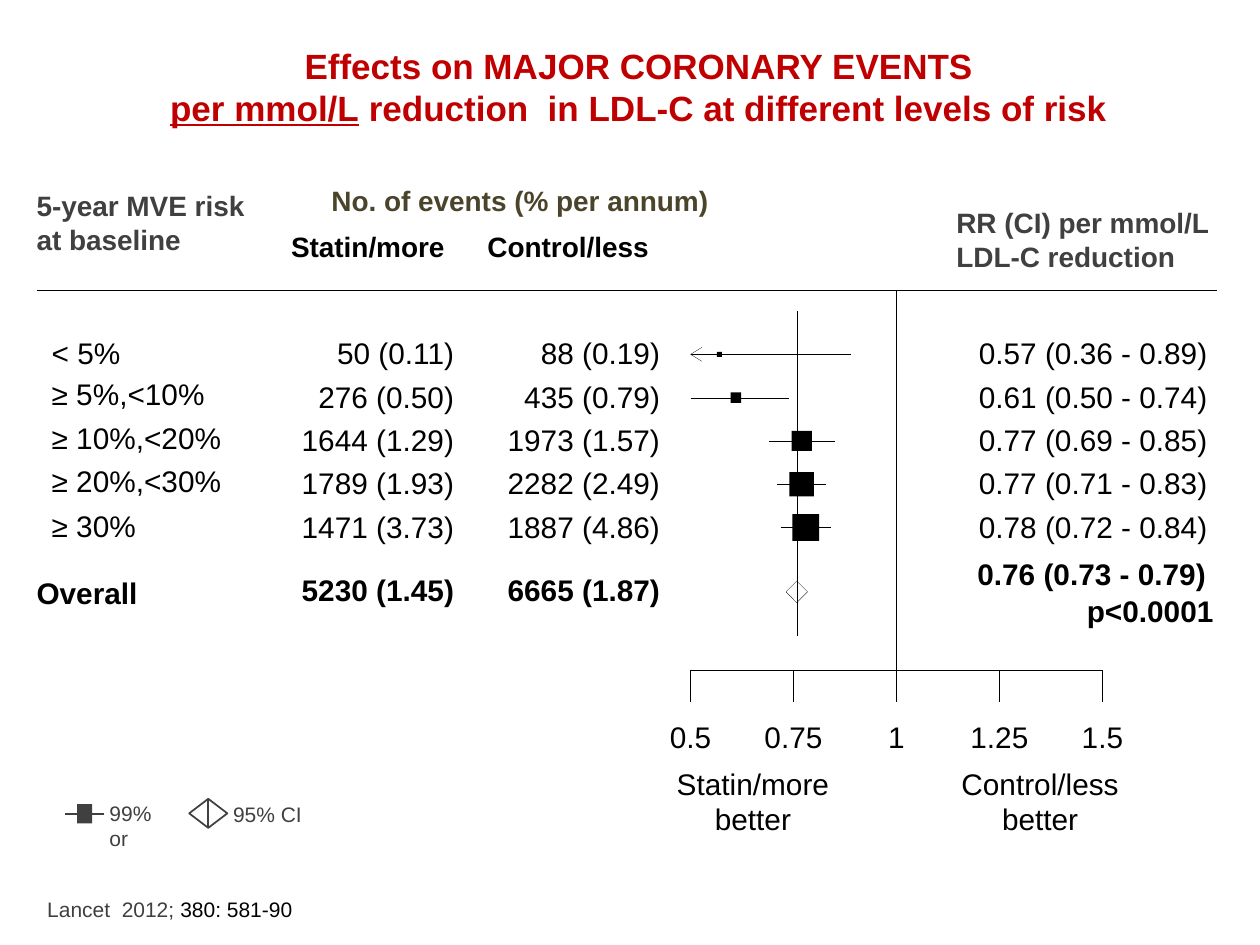
from lxml import etree
from pptx import Presentation
from pptx.dml.color import RGBColor
from pptx.enum.dml import MSO_LINE
from pptx.enum.shapes import MSO_CONNECTOR, MSO_SHAPE
from pptx.enum.text import MSO_ANCHOR, PP_ALIGN
from pptx.oxml.ns import qn
from pptx.util import Pt

LEFT, CENTER, RIGHT = PP_ALIGN.LEFT, PP_ALIGN.CENTER, PP_ALIGN.RIGHT
STRAIGHT = MSO_CONNECTOR.STRAIGHT
RECTANGLE, DIAMOND = MSO_SHAPE.RECTANGLE, MSO_SHAPE.DIAMOND
FONT, BLACK, GREY, RED, OLIVE = "Arial", "000000", "404040", "C00000", "4A452A"
HAIRLINE = 0.13

TITLE = [("Effects on MAJOR CORONARY EVENTS\v", False), ("per mmol/L", True),
         (" reduction  in LDL-C at different levels of risk", False)]
HEADERS = [
    ("5-year MVE risk\nat baseline", 20.9, 108, 130, GREY),
    ("No. of events (% per annum)", 189.4, 105.1, 225, OLIVE),
    ("Statin/more", 166.3, 131, 95, BLACK),
    ("Control/less", 278.6, 131, 100, BLACK),
    ("RR (CI) per mmol/L\nLDL-C reduction", 546.5, 117.4, 151, GREY),
]
ROWS = [
    ("< 5%", 191.5, "50 (0.11)", "88 (0.19)", 0.57, 0.36, 0.89, 2.9),
    ("≥ 5%,<10%", 214.8, "276 (0.50)", "435 (0.79)", 0.61, 0.50, 0.74, 6),
    ("≥ 10%,<20%", 239.8, "1644 (1.29)", "1973 (1.57)", 0.77, 0.69, 0.85, 11.5),
    ("≥ 20%,<30%", 264.2, "1789 (1.93)", "2282 (2.49)", 0.77, 0.71, 0.83, 14),
    ("≥ 30%", 290.2, "1471 (3.73)", "1887 (4.86)", 0.78, 0.72, 0.84, 15.3),
]
OVERALL = [
    ("Overall", 20.9, 328.5, 80, LEFT),
    ("5230 (1.45)", 149.5, 326.9, 110, RIGHT),
    ("6665 (1.87)", 267.2, 326.9, 110, RIGHT),
    ("0.76 (0.73 - 0.79)", 558.5, 317.8, 140, LEFT),
    ("p<0.0001", 593.5, 339, 100, RIGHT),
]
TICKS = [0.5, 0.75, 1, 1.25, 1.5]
DIRECTIONS = [("Statin/more\nbetter", 430.3), ("Control/less\nbetter", 594.4)]

AXIS_LEFT, AXIS_WIDTH, AXIS_TOP = 394.6, 235.4, 382.9
FIRST_ROW, ROW_STEP = 202.5, 24.75
RULE_TOP, POOLED_X, POOLED_Y = 165.6, 455.3, 338.2

deck = Presentation()
deck.slide_width, deck.slide_height = Pt(720), Pt(540)
page = deck.slides.add_slide(deck.slide_layouts[5])


def color(value):
    return RGBColor.from_string(value)


def style(span, size, ink, bold=False):
    span.font.name, span.font.size, span.font.bold = FONT, Pt(size), bold
    span.font.color.rgb = color(ink)


def add_text(text, left, top, width, size=17, ink=BLACK, bold=False, align=LEFT):
    height = size * 1.2 * (text.count("\n") + 1)
    box = page.shapes.add_textbox(Pt(left), Pt(top), Pt(width), Pt(height))
    frame = box.text_frame
    frame.word_wrap = True
    frame.margin_left = frame.margin_right = frame.margin_top = frame.margin_bottom = 0
    frame.text = text
    for para in frame.paragraphs:
        para.alignment = align
        for span in para.runs:
            style(span, size, ink, bold)
    return frame


def add_line(x1, y1, x2, y2, ink=BLACK, weight=HAIRLINE):
    line = page.shapes.add_connector(STRAIGHT, Pt(x1), Pt(y1), Pt(x2), Pt(y2))
    line.line.color.rgb = color(ink)
    line.line.width = Pt(weight)
    etree.SubElement(line._element.spPr, qn("a:effectLst"))
    return line


def add_square(x, y, width, height, ink=BLACK):
    square = page.shapes.add_shape(
        RECTANGLE, Pt(x - width / 2), Pt(y - height / 2), Pt(width), Pt(height))
    square.shadow.inherit = False
    square.fill.solid()
    square.fill.fore_color.rgb = color(ink)
    square.line.fill.background()


def add_diamond(x, y, width, height, ink=BLACK, weight=HAIRLINE):
    diamond = page.shapes.add_shape(
        DIAMOND, Pt(x - width / 2), Pt(y - height / 2), Pt(width), Pt(height))
    diamond.shadow.inherit = False
    diamond.fill.background()
    diamond.line.color.rgb = color(ink)
    diamond.line.width = Pt(weight)
    return diamond


def add_cutoff_arrow(x, y):
    builder = page.shapes.build_freeform(Pt(x + 6.5), Pt(y - 4))
    builder.add_line_segments([(Pt(x), Pt(y)), (Pt(x + 6.5), Pt(y + 4))], close=False)
    arrow = builder.convert_to_shape()
    arrow.shadow.inherit = False
    arrow.fill.background()
    arrow.line.color.rgb = color(BLACK)
    arrow.line.width = Pt(HAIRLINE)


def axis_x(ratio):
    return AXIS_LEFT + (ratio - TICKS[0]) * AXIS_WIDTH


title = page.shapes.title
title.left, title.top, title.width, title.height = Pt(41), Pt(21.6), Pt(648), Pt(90)
title.text_frame.word_wrap = True
title.text_frame.vertical_anchor = MSO_ANCHOR.TOP
title_para = title.text_frame.paragraphs[0]
title_para.text = TITLE[0][0]
for text, underlined in TITLE[1:]:
    span = title_para.add_run()
    span.text = text
    span.font.underline = underlined
title_para.alignment = CENTER
for span in title_para.runs:
    style(span, 20, RED, True)

for text, left, top, width, ink in HEADERS:
    add_text(text, left, top, width, 16, ink, True)

add_line(20.9, RULE_TOP, 695.5, RULE_TOP)
add_line(axis_x(1), RULE_TOP, axis_x(1), 395.3)
add_line(POOLED_X, 177.8, POOLED_X, 362.9).line.dash_style = MSO_LINE.SQUARE_DOT

for index, (risk, top, statin, control, ratio, low, high, size) in enumerate(ROWS):
    middle = FIRST_ROW + index * ROW_STEP
    add_text(risk, 29.5, top, 110)
    for text, right in ((statin, 259.5), (control, 377.2)):
        add_text(text, right - 110, middle - 11, 110, align=RIGHT)
    add_text(f"{ratio:.2f} ({low:.2f} - {high:.2f})", 559.4, middle - 11, 138)
    add_line(axis_x(max(low, TICKS[0])), middle, axis_x(high), middle)
    add_square(axis_x(ratio), middle, size, size)
    if low < TICKS[0]:
        add_cutoff_arrow(AXIS_LEFT, middle)

for text, left, top, width, align in OVERALL:
    add_text(text, left, top, width, bold=True, align=align)
add_diamond(POOLED_X, POOLED_Y, 12.4, 12.4)

add_line(AXIS_LEFT, AXIS_TOP, AXIS_LEFT + AXIS_WIDTH, AXIS_TOP)
for tick in TICKS:
    add_line(axis_x(tick), AXIS_TOP, axis_x(tick), AXIS_TOP + 18)
    add_text(str(tick), axis_x(tick) - 25, 410.8, 50, align=CENTER)
for text, middle in DIRECTIONS:
    add_text(text, middle - 50, 437.4, 100, align=CENTER)

add_line(37.4, 465, 59.6, 465, GREY, 1)
add_square(48.4, 465, 8.5, 11, GREY)
add_text("99% or", 62.6, 457.2, 36, 12, GREY)
legend_diamond = add_diamond(119, 464.8, 21.8, 16.6, GREY, 1)
divider = add_line(119, 456.5, 119, 473.1, GREY, 1)
divider.begin_connect(legend_diamond, 0)
divider.end_connect(legend_diamond, 2)
add_text("95% CI", 133.2, 458.2, 45, 12, GREY)

citation = add_text("Lancet  2012; ", 27, 512.6, 160, 12, GREY).paragraphs[0]
pages = citation.add_run()
pages.text = "380: 581-90"
style(pages, 12, BLACK)

deck.save("out.pptx")
